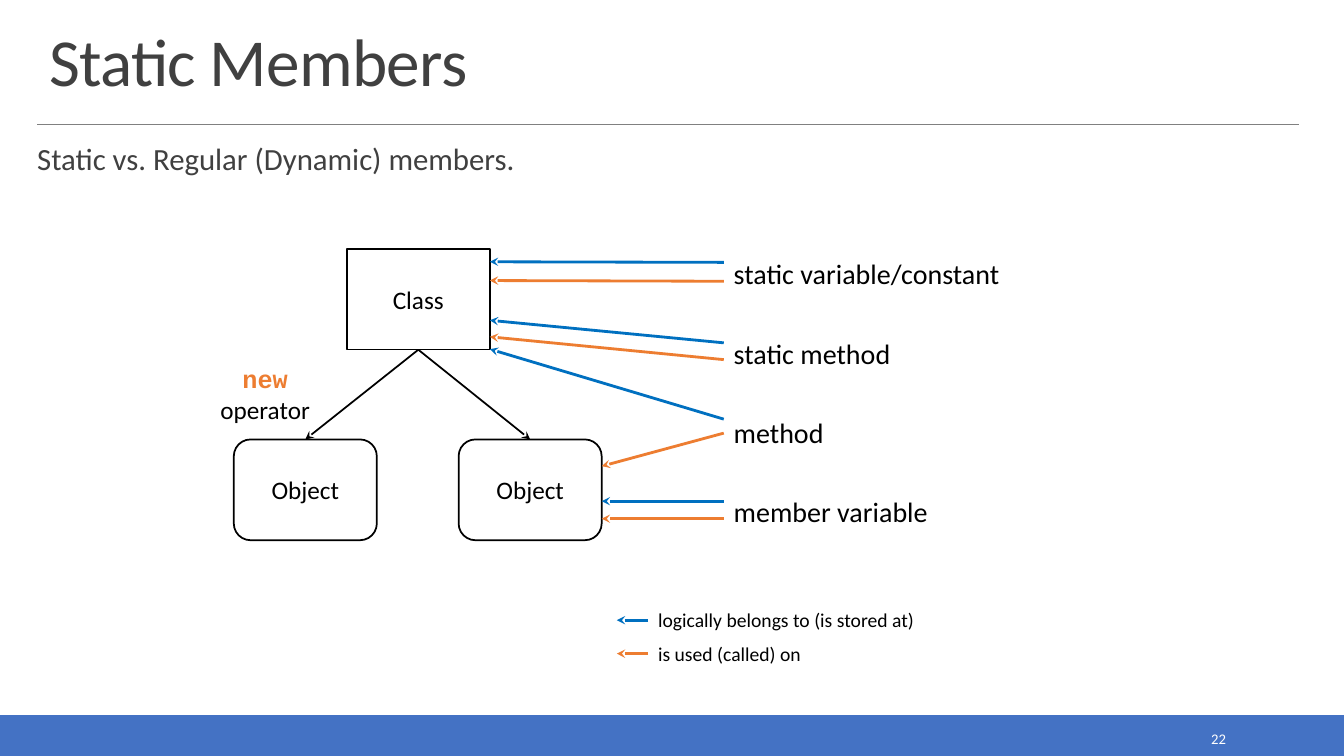
from lxml import etree
from pptx import Presentation
from pptx.dml.color import RGBColor
from pptx.enum.shapes import MSO_CONNECTOR, MSO_SHAPE
from pptx.enum.text import MSO_ANCHOR, MSO_AUTO_SIZE, PP_ALIGN
from pptx.oxml.ns import qn
from pptx.util import Pt

RECT, ROUNDED = MSO_SHAPE.RECTANGLE, MSO_SHAPE.ROUNDED_RECTANGLE
STRAIGHT = MSO_CONNECTOR.STRAIGHT
TOP, MIDDLE, BOTTOM = MSO_ANCHOR.TOP, MSO_ANCHOR.MIDDLE, MSO_ANCHOR.BOTTOM
LEFT, CENTER, RIGHT = PP_ALIGN.LEFT, PP_ALIGN.CENTER, PP_ALIGN.RIGHT
NO_FIT = MSO_AUTO_SIZE.NONE
TOP_SITE, BOTTOM_SITE = 0, 2

COLORS = {
    "bar": "4472C4", "rule": "808080", "heading": "404040", "ink": "000000",
    "paper": "FFFFFF", "stored": "0070C0", "used": "ED7D31",
}
BOX_WIDTH, BOX_HEIGHT = 102.2, 72
CLASS_LEFT, CLASS_TOP = 247.7, 177.8
OBJECT_LEFTS, OBJECT_TOP = (167, 327.6), 313.9
CLASS_EDGE = CLASS_LEFT + BOX_WIDTH
OBJECT_EDGE = OBJECT_LEFTS[1] + BOX_WIDTH
MEMBER_LEFT, MEMBER_TOP, MEMBER_STEP = 517, 180, 56.6
MEMBERS = ["static variable/constant", "static method", "method", "member variable"]
MEMBER_ARROWS = [
    ("stored", 187.4, CLASS_EDGE, 187),
    ("used", 200.9, CLASS_EDGE, 200.4),
    ("stored", 244.9, CLASS_EDGE, 228.8),
    ("used", 256.9, CLASS_EDGE, 240.6),
    ("stored", 299.4, CLASS_EDGE, 249.4),
    ("used", 309.4, OBJECT_EDGE, 333),
    ("stored", 358, OBJECT_EDGE, 358),
    ("used", 370.5, OBJECT_EDGE, 370.5),
]
LEGEND = [("stored", "logically belongs to (is stored at)"), ("used", "is used (called) on")]
LEGEND_LEFT, LEGEND_TOP, LEGEND_STEP = 463, 431, 23.9


def rgb(color):
    """Return the named colour."""
    return RGBColor.from_string(COLORS[color])


def apply_format(target, values):
    """Set each named attribute of the target."""
    for attribute, value in values.items():
        setattr(target, attribute, value)


def write(paragraph, text, size, color="ink", font="Calibri", bold=False, align=LEFT):
    """Write one formatted run into a paragraph."""
    paragraph.alignment = align
    run = paragraph.add_run()
    run.text = text
    apply_format(run.font, {"name": font, "size": Pt(size), "bold": bold})
    run.font.color.rgb = rgb(color)
    return run


def add_text(slide, box, text, size, color="ink", align=LEFT, anchor=TOP):
    """Add a text box with one paragraph and return its frame."""
    frame = slide.shapes.add_textbox(*map(Pt, box)).text_frame
    apply_format(frame, {"word_wrap": True, "vertical_anchor": anchor})
    write(frame.paragraphs[0], text, size, color, align=align)
    return frame


def add_box(slide, kind, box, fill="paper", line="ink", text=""):
    """Add an outlined shape with an optional centred label."""
    shape = slide.shapes.add_shape(kind, *map(Pt, box))
    shape.shadow.inherit = False
    shape.fill.solid()
    shape.fill.fore_color.rgb = rgb(fill)
    shape.line.color.rgb = rgb(line)
    shape.line.width = Pt(1.25)
    if text:
        shape.text_frame.vertical_anchor = MIDDLE
        write(shape.text_frame.paragraphs[0], text, 18, align=CENTER)
    return shape


def add_line(slide, ends, color, width, arrow=True):
    """Add a straight line, with a stealth head at its end if wanted."""
    line = slide.shapes.add_connector(STRAIGHT, *map(Pt, ends))
    line.line.color.rgb = rgb(color)
    line.line.width = Pt(width)
    if arrow:
        etree.SubElement(line.line._get_or_add_ln(), qn("a:tailEnd"), type="stealth")
    etree.SubElement(line._element.spPr, qn("a:effectLst"))
    return line


def add_heading(slide):
    """Fill the title and add the rule, subtitle and footer."""
    add_box(slide, RECT, (0, 511.2, 960, 28.8), "bar", "bar")
    add_line(slide, (26.6, 88.6, 928, 88.6), "rule", 0.5, arrow=False)
    title = slide.shapes.title
    apply_format(title, {"left": Pt(28), "top": Pt(14.4), "width": Pt(901.4), "height": Pt(60.5)})
    apply_format(title.text_frame, {"vertical_anchor": BOTTOM, "auto_size": NO_FIT})
    heading = title.text_frame.paragraphs[0]
    heading.line_spacing = 0.85
    run = write(heading, "Static Members", 48, "heading")
    run.font._element.set("spc", "-50")

    subtitle = add_text(slide, (26.6, 100, 901.4, 39.6),
                        "Static vs. Regular (Dynamic) members.", 22, "heading")
    apply_format(subtitle, {"margin_left": 0, "margin_right": 0,
                            "margin_top": Pt(3), "margin_bottom": Pt(3)})
    apply_format(subtitle.paragraphs[0], {"line_spacing": 0.9, "space_before": Pt(12),
                                          "space_after": Pt(2)})
    add_text(slide, (779.8, 517.7, 103, 20.2), "22", 10.5, "paper", RIGHT, MIDDLE)


def add_instances(slide):
    """Add the class, its objects and the operator that creates them."""
    size = (BOX_WIDTH, BOX_HEIGHT)
    class_box = add_box(slide, RECT, (CLASS_LEFT, CLASS_TOP, *size), text="Class")
    for left in OBJECT_LEFTS:
        object_box = add_box(slide, ROUNDED, (left, OBJECT_TOP, *size), text="Object")
        creation = add_line(slide, (0, 0, 0, 0), "ink", 1.25)
        creation.begin_connect(class_box, BOTTOM_SITE)
        creation.end_connect(object_box, TOP_SITE)
    operator = add_text(slide, (143.3, 256.3, 92.2, 51), "", 18)
    write(operator.paragraphs[0], "new", 18, "used", "Courier New", True, CENTER)
    write(operator.add_paragraph(), "operator", 18, align=CENTER)


def add_members(slide):
    """Add the member labels and their arrows."""
    for row, member in enumerate(MEMBERS):
        add_text(slide, (MEMBER_LEFT, MEMBER_TOP + row * MEMBER_STEP, 245, 31.7), member, 20)
    for relation, start, edge, end in MEMBER_ARROWS:
        add_line(slide, (MEMBER_LEFT, start, edge, end), relation, 2)


def add_legend(slide):
    """Explain the two arrow colours."""
    for row, (relation, meaning) in enumerate(LEGEND):
        top = LEGEND_TOP + row * LEGEND_STEP
        add_line(slide, (LEGEND_LEFT, top + 12, LEGEND_LEFT - 22.4, top + 12), relation, 2)
        add_text(slide, (LEGEND_LEFT, top, 238, 24.5), meaning, 14)


def main():
    """Build and save the slide."""
    deck = Presentation()
    apply_format(deck, {"slide_width": Pt(960), "slide_height": Pt(540)})
    slide = deck.slides.add_slide(deck.slide_layouts.get_by_name("Title Only"))
    add_heading(slide)
    add_instances(slide)
    add_members(slide)
    add_legend(slide)
    deck.save("out.pptx")


if __name__ == "__main__":
    main()
